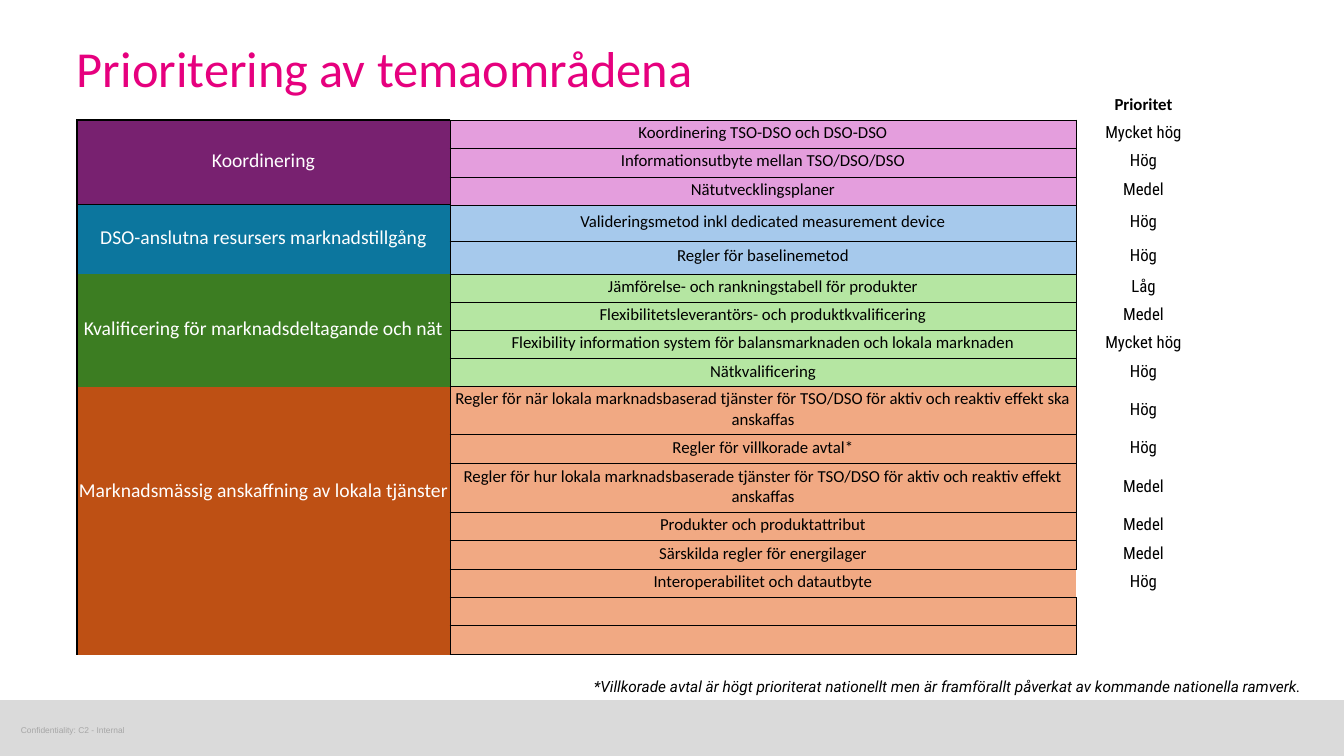
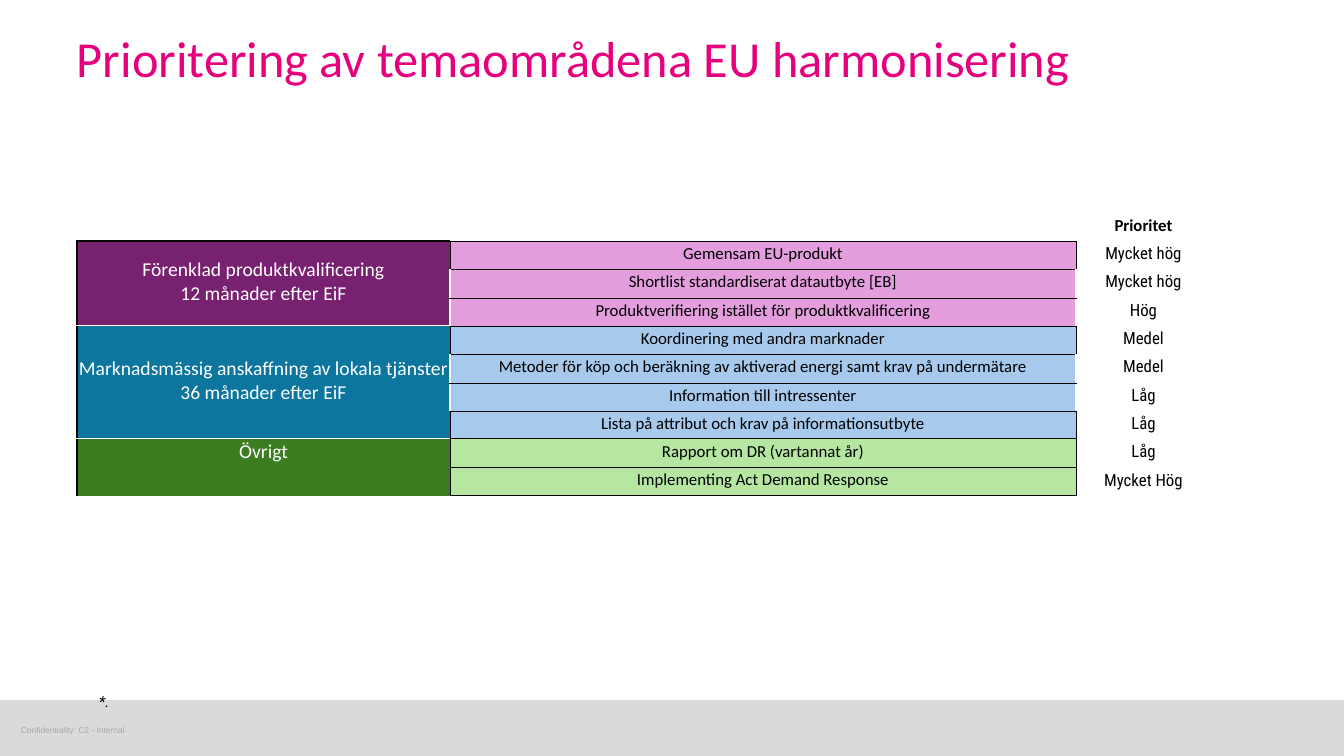
from pptx import Presentation
from pptx.util import Pt, Emu
from pptx.dml.color import RGBColor
from pptx.enum.shapes import MSO_SHAPE as Shape
from pptx.enum.text import PP_ALIGN as Align, MSO_ANCHOR as Anchor, MSO_AUTO_SIZE as Fit
from pptx.oxml.ns import qn
from lxml.etree import SubElement as Sub, Element

WIDE, HIGH = 1344, 756
SCALE = 12192000 / WIDE
PINK, BLACK, WHITE, BAND, GREY = "E6007E", "000000", "FFFFFF", "DADADA", "737373"
PURPLE = ("782170", "E49EDD")
BLUE = ("0C769E", "A6C9EC")
GREEN = ("3C7D22", "B5E6A2")
ORANGE = ("BE5014", "F1A983")
SANS, SLIM = "Calibri", "Roboto Condensed"
COLS = (373, 626, 135)
STEPS = (28, 28, 29)
PLAIN = "{2D5ABB26-0587-4C30-8999-92F81FD0307C}"
THIN, THICK, LIGHT = (BLACK, 0.5), (BLACK, 1), (WHITE, 1)


def px(num):
    return Emu(round(num * SCALE))


def rgb(code):
    return RGBColor.from_string(code)


def add_run(para, text, size, font=SANS, color=BLACK, bold=False, italic=False):
    run = para.add_run()
    run.text = text
    face = run.font
    face.size, face.name, face.bold, face.italic = Pt(size), font, bold, italic
    face.color.rgb = rgb(color)
    return run


def pad(frame, left=0, top=0, right=0, bottom=0):
    frame.margin_left, frame.margin_top = px(left), px(top)
    frame.margin_right, frame.margin_bottom = px(right), px(bottom)


def add_box(slide, box):
    frame = slide.shapes.add_textbox(*map(px, box)).text_frame
    frame.word_wrap = True
    return frame


def add_foot(slide):
    band = slide.shapes.add_shape(Shape.RECTANGLE, *map(px, (0, 700, WIDE, 56)))
    band.shadow.inherit = False
    band.fill.solid()
    band.fill.fore_color.rgb = rgb(BAND)
    band.line.fill.background()
    frame = add_box(slide, (21, 725, 107, 10))
    pad(frame)
    run = add_run(frame.paragraphs[0], "Confidentiality: C2 - Internal", 6, "Arial", GREY)
    tint = next(run.font._element.iter(qn("a:srgbClr")))
    Sub(tint, qn("a:alpha"), val="50000")


def add_title(slide, text, box, lift):
    title = slide.shapes.title
    title.left, title.top, title.width, title.height = map(px, box)
    frame = title.text_frame
    frame.auto_size, frame.word_wrap = Fit.NONE, True
    frame.vertical_anchor = Anchor.BOTTOM
    pad(frame, bottom=lift)
    para = frame.paragraphs[0]
    para.alignment, para.line_spacing = Align.LEFT, 0.85
    add_run(para, text, 36, color=PINK)


def add_note(slide, text, box):
    para = add_box(slide, box).paragraphs[0]
    add_run(para, text, 11, "Roboto", italic=True)


def fill_cell(cell, lines=(), back=None, edges=None, size=12, **style):
    cell.vertical_anchor = Anchor.MIDDLE
    pad(cell, 1, 1, 1, 4)
    frame = cell.text_frame
    for num, text in enumerate(lines):
        para = frame.add_paragraph() if num else frame.paragraphs[0]
        para.alignment = Align.CENTER
        add_run(para, text, size, **style)
    if not lines:
        Sub(frame.paragraphs[0]._p, qn("a:endParaRPr"), sz="1200")
    if back:
        cell.fill.solid()
        cell.fill.fore_color.rgb = rgb(back)
    else:
        cell.fill.background()
    props = cell._tc.get_or_add_tcPr()
    edges = edges or {}
    for spot, side in enumerate(side for side in "LRTB" if side in edges):
        color, width = edges[side]
        line = Element(qn("a:ln" + side), w=str(Pt(width)))
        Sub(Sub(line, qn("a:solidFill")), qn("a:srgbClr"), val=color)
        props.insert(spot, line)


def add_grid(slide, left, top, groups, tall):
    count = 1 + sum(len(group[-1]) for group in groups)
    sizes = [tall.get(row, STEPS[row % 3]) for row in range(count)]
    box = map(px, (left, top, sum(COLS), sum(sizes)))
    frame = slide.shapes.add_table(count, len(COLS), *box)
    table = frame.table
    table.first_row = table.horz_banding = False
    table._tbl.tblPr.find(qn("a:tableStyleId")).text = PLAIN
    for col, width in zip(table.columns, COLS):
        col.width = px(width)
    for row, size in zip(table.rows, sizes):
        row.height = px(size)
    fill_cell(table.cell(0, 0), edges={"B": THICK})
    fill_cell(table.cell(0, 1), edges={"B": THIN})
    fill_cell(table.cell(0, 2), ["Prioritet"], bold=True)
    row = 1
    for label, (dark, pale), span, rims, items in groups:
        for num, (text, rank, *edge) in enumerate(items):
            rim = {"L": THICK}
            if num == 0 or num >= span:
                rim["R"] = THIN
            if num == 0:
                rim.update(rims)
            fill_cell(table.cell(row + num, 0), label if num == 0 else (),
                      dark, rim, 14, color=WHITE)
            start = edge[0] if edge else THIN
            rim = {"T": THIN, "B": THIN}
            if start:
                rim["L"] = start
            fill_cell(table.cell(row + num, 1), [text] if text else (), pale, rim)
            fill_cell(table.cell(row + num, 2), [rank] if rank else (), font=SLIM)
        if span > 1:
            table.cell(row, 0).merge(table.cell(row + span - 1, 0))
        row += len(items)


THEMES = [
    (["Koordinering"], PURPLE, 3, {"T": THICK}, [
        ("Koordinering TSO-DSO och DSO-DSO", "Mycket hög"),
        ("Informationsutbyte mellan TSO/DSO/DSO", "Hög"),
        ("Nätutvecklingsplaner", "Medel")]),
    (["DSO-anslutna resursers marknadstillgång"], BLUE, 2, {}, [
        ("Valideringsmetod inkl dedicated measurement device", "Hög"),
        ("Regler för baselinemetod", "Hög")]),
    (["Kvalificering för marknadsdeltagande och nät"], GREEN, 4, {}, [
        ("Jämförelse- och rankningstabell för produkter", "Låg"),
        ("Flexibilitetsleverantörs- och produktkvalificering", "Medel"),
        ("Flexibility information system för balansmarknaden och lokala marknaden",
         "Mycket hög"),
        ("Nätkvalificering", "Hög")]),
    (["Marknadsmässig anskaffning av lokala tjänster"], ORANGE, 6, {}, [
        ("Regler för när lokala marknadsbaserad tjänster för TSO/DSO för aktiv och "
         "reaktiv effekt ska anskaffas", "Hög"),
        ("Regler för villkorade avtal*", "Hög"),
        ("Regler för hur lokala marknadsbaserade tjänster för TSO/DSO för aktiv och "
         "reaktiv effekt anskaffas", "Medel"),
        ("Produkter och produktattribut", "Medel"),
        ("Särskilda regler för energilager", "Medel"),
        ("Interoperabilitet och datautbyte", "Hög", None),
        ("", ""),
        ("", "")]),
]

UNION = [
    (["Förenklad produktkvalificering", "12 månader efter EiF"], PURPLE, 3,
     {"T": THICK, "B": LIGHT}, [
        ("Gemensam EU-produkt", "Mycket hög"),
        ("Shortlist standardiserat datautbyte [EB]", "Mycket hög", LIGHT),
        ("Produktverifiering istället för produktkvalificering", "Hög", LIGHT)]),
    (["Marknadsmässig anskaffning av lokala tjänster", "36 månader efter EiF"], BLUE, 4,
     {"T": LIGHT}, [
        ("Koordinering med andra marknader", "Medel"),
        ("Metoder för köp och beräkning av aktiverad energi samt krav på undermätare",
         "Medel", LIGHT),
        ("Information till intressenter", "Låg", LIGHT),
        ("Lista på attribut och krav på informationsutbyte", "Låg")]),
    (["Övrigt"], GREEN, 1, {}, [
        ("Rapport om DR (vartannat år)", "Låg"),
        ("Implementing Act Demand Response", "Mycket Hög")]),
]


def add_page(deck, title, width, lift, top, groups, tall, note, spot):
    slide = deck.slides.add_slide(deck.slide_layouts[5])
    add_foot(slide)
    add_title(slide, title, (77, 37, width, 108), lift)
    add_grid(slide, 77, top, groups, tall)
    add_note(slide, note, (*spot, 737, 29))


def main():
    deck = Presentation()
    deck.slide_width, deck.slide_height = px(WIDE), px(HIGH)
    add_page(deck, "Prioritering av temaområdena", 957, 47, 92, THEMES,
             {4: 36, 5: 33, 10: 48, 12: 49},
             "*Villkorade avtal är högt prioriterat nationellt men är framförallt "
             "påverkat av kommande nationella ramverk.", (584, 672))
    add_page(deck, "Prioritering av temaområdena EU harmonisering", 1136, 57, 213, UNION,
             {}, "*.", (89, 687))
    deck.save("out.pptx")


if __name__ == "__main__":
    main()
